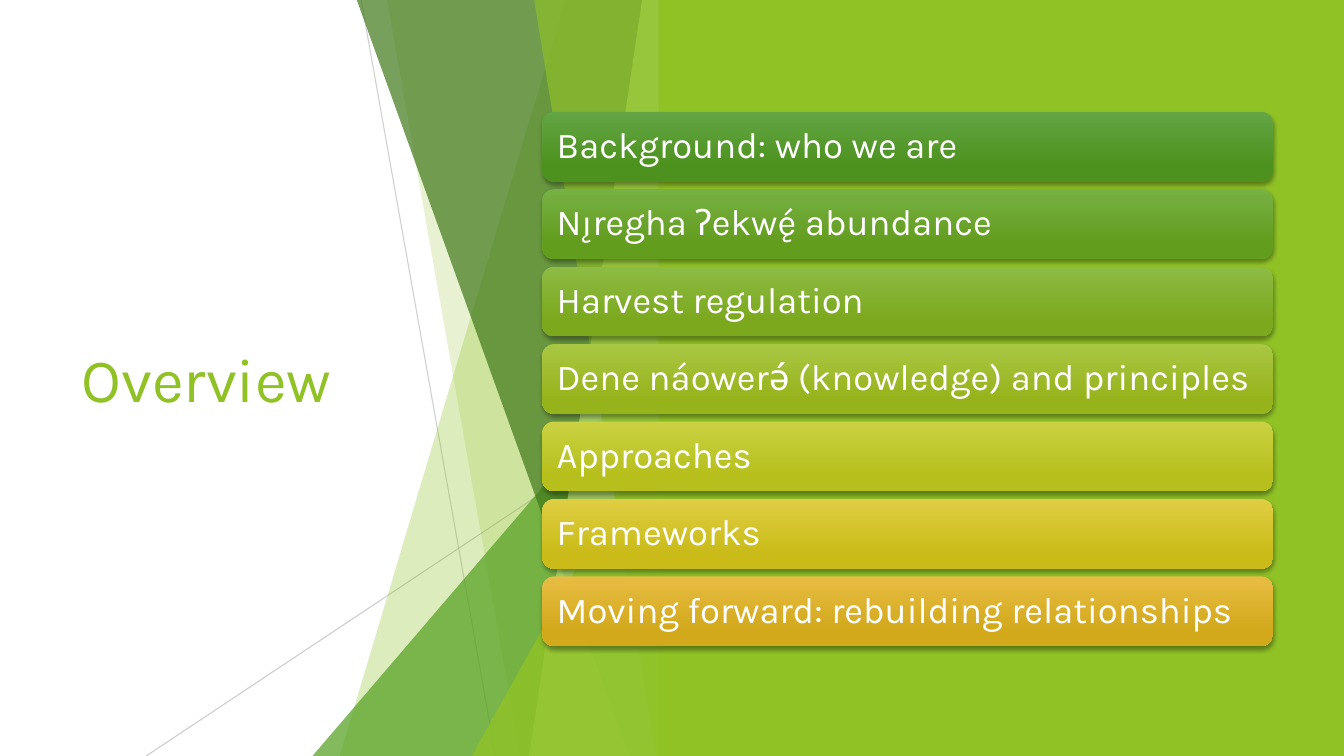
from collections import namedtuple
from dataclasses import dataclass

from lxml import etree
from pptx import Presentation
from pptx import util as u
from pptx.dml.color import RGBColor
from pptx.enum import shapes, text
from pptx.oxml.ns import qn

SLIDE_WIDTH, SLIDE_HEIGHT = u.Inches(13.33), u.Inches(7.5)
COLUMNS, ROWS = 80, 45
Box = namedtuple("Box", "left top width height")


@dataclass(frozen=True)
class Theme:
    """Colours, font and type sizes of the deck."""
    font: str = "Karla"
    title_size: int = 44
    topic_size: int = 26
    green: str = "90C226"
    mid_green: str = "54A021"
    dark_green: str = "3F7819"
    pale_green: str = "C0E474"
    grey: str = "BFBFBF"
    white: str = "FFFFFF"
    shadow: str = "000000"


THEME = Theme()
TOPICS = [
    ("Background: who we are", "63A545", "4D921E"),
    ("Nı̨regha Ɂekwę́ abundance", "77B044", "629D1E"),
    ("Harvest regulation", "8EBB44", "7BA81D"),
    ("Dene náowerǝ́ (knowledge) and principles", "AAC744", "97B31C"),
    ("Approaches", "CAD243", "B6BF1B"),
    ("Frameworks", "DFCE43", "CABB19"),
    ("Moving forward: rebuilding relationships", "E7BC43", "D2A91B"),
]


def column(count):
    """Return the length of a number of grid columns."""
    return u.Emu(round(SLIDE_WIDTH * count / COLUMNS))


def row(count):
    """Return the length of a number of grid rows."""
    return u.Emu(round(SLIDE_HEIGHT * count / ROWS))


def place(box):
    """Turn a grid box into slide lengths."""
    return column(box.left), row(box.top), column(box.width), row(box.height)


def set_alpha(color_parent, percent):
    """Make the colour inside an element partly opaque."""
    color = next(color_parent.iter(qn("a:srgbClr")))
    etree.SubElement(color, qn("a:alpha")).set("val", str(percent * 1000))


def paint(shape, color, opacity=100):
    """Give a shape a flat fill without line or shadow."""
    shape.shadow.inherit = False
    shape.fill.solid()
    shape.fill.fore_color.rgb = RGBColor.from_string(color)
    shape.line.fill.background()
    if opacity < 100:
        set_alpha(shape._element.spPr, opacity)


def write(shape, words, size, color, inset, spacing=1.0):
    """Write one left-aligned, vertically centred line in a shape."""
    frame = shape.text_frame
    frame.word_wrap = True
    frame.vertical_anchor = text.MSO_ANCHOR.MIDDLE
    frame.margin_left = frame.margin_right = u.Inches(inset)
    frame.margin_top = frame.margin_bottom = u.Inches(inset)
    paragraph = frame.paragraphs[0]
    paragraph.alignment = text.PP_ALIGN.LEFT
    paragraph.line_spacing = spacing
    run = paragraph.add_run()
    run.text = words
    run.font.name = THEME.font
    run.font.size = u.Pt(size)
    run.font.color.rgb = RGBColor.from_string(color)


def add_title(slide, box):
    """Add the slide title."""
    title = slide.shapes.add_textbox(*place(box))
    write(title, "Overview", THEME.title_size, THEME.green, 0.1)


def add_facets(slide, box):
    """Add the thin lines and translucent facets along the panel's edge."""
    right, bottom = box.left + box.width, box.top + box.height

    def ray(start_x, start_y, end_x, opacity):
        line = slide.shapes.add_connector(
            shapes.MSO_CONNECTOR.STRAIGHT,
            column(box.left + start_x), row(box.top + start_y),
            column(box.left + end_x), row(bottom))
        line.line.color.rgb = RGBColor.from_string(THEME.grey)
        line.line.width = u.Pt(0.75)
        set_alpha(line._element.spPr, opacity)
        etree.SubElement(line._element.spPr, qn("a:effectLst"))

    def sheet(top_x, bottom_x, color, opacity):
        builder = slide.shapes.build_freeform(
            column(box.left + top_x), row(box.top), scale=1.0)
        builder.add_line_segments([
            (column(right), row(box.top)), (column(right), row(bottom)),
            (column(box.left + bottom_x), row(bottom))], close=True)
        paint(builder.convert_to_shape(), color, opacity)

    def wedge(left, top, color, opacity):
        area = Box(box.left + left, box.top + top, box.width - left, box.height - top)
        triangle = slide.shapes.add_shape(
            shapes.MSO_SHAPE.ISOSCELES_TRIANGLE, *place(area))
        triangle.adjustments[0] = 1
        paint(triangle, color, opacity)

    ray(2.9, 0, 10.9, 75)
    ray(21.4, 24.2, -9.9, 80)
    sheet(15.06, 1.62, THEME.green, 30)
    sheet(4.44, 12.36, THEME.green, 20)
    wedge(0, 20, THEME.mid_green, 72)
    sheet(2.64, 18.84, THEME.dark_green, 70)
    sheet(19.62, 12.9, THEME.pale_green, 70)
    sheet(13.2, 20.46, THEME.green, 65)
    wedge(9.48, 23.6, THEME.green, 80)


def add_panel(slide, box):
    """Add the solid panel behind the topics."""
    panel = slide.shapes.add_shape(shapes.MSO_SHAPE.RECTANGLE, *place(box))
    paint(panel, THEME.green)


def add_shadow(shape):
    """Drop a soft shadow straight below a shape."""
    shape.shadow.inherit = False
    effects = shape._element.spPr.find(qn("a:effectLst"))
    shadow = etree.SubElement(
        effects, qn("a:outerShdw"), blurRad=str(u.Pt(3)), dist=str(u.Pt(2)),
        dir="5400000", algn="ctr", rotWithShape="0")
    etree.SubElement(shadow, qn("a:srgbClr")).set("val", THEME.shadow)
    set_alpha(shadow, 35)


def add_topics(slide, box, gap=0.46):
    """Stack the topic cards evenly in a box."""
    pitch = (box.height + gap) / len(TOPICS)
    for index, (words, light, dark) in enumerate(TOPICS):
        area = Box(box.left, box.top + index * pitch, box.width, pitch - gap)
        card = slide.shapes.add_shape(
            shapes.MSO_SHAPE.ROUNDED_RECTANGLE, *place(area))
        card.fill.gradient()
        card.fill.gradient_angle = 270
        for stop, position, color in zip(
                card.fill.gradient_stops, (0, 0.78), (light, dark)):
            stop.position = position
            stop.color.rgb = RGBColor.from_string(color)
        card.line.fill.background()
        add_shadow(card)
        write(card, words, THEME.topic_size, THEME.white, 0.11, 0.9)


def build_overview(presentation):
    """Add the overview slide."""
    slide = presentation.slides.add_slide(presentation.slide_layouts[6])
    slide.background.fill.solid()
    slide.background.fill.fore_color.rgb = RGBColor.from_string(THEME.white)
    add_title(slide, Box(4.26, 9.06, 23.28, 26.88))
    add_facets(slide, Box(18.6, 0, 21.4, ROWS))
    add_panel(slide, Box(39.2, 0, 40.8, ROWS))
    add_topics(slide, Box(32.28, 6.66, 43.5, 31.8))


def main():
    """Build and save the presentation."""
    presentation = Presentation()
    presentation.slide_width = SLIDE_WIDTH
    presentation.slide_height = SLIDE_HEIGHT
    build_overview(presentation)
    presentation.save("out.pptx")


if __name__ == "__main__":
    main()
